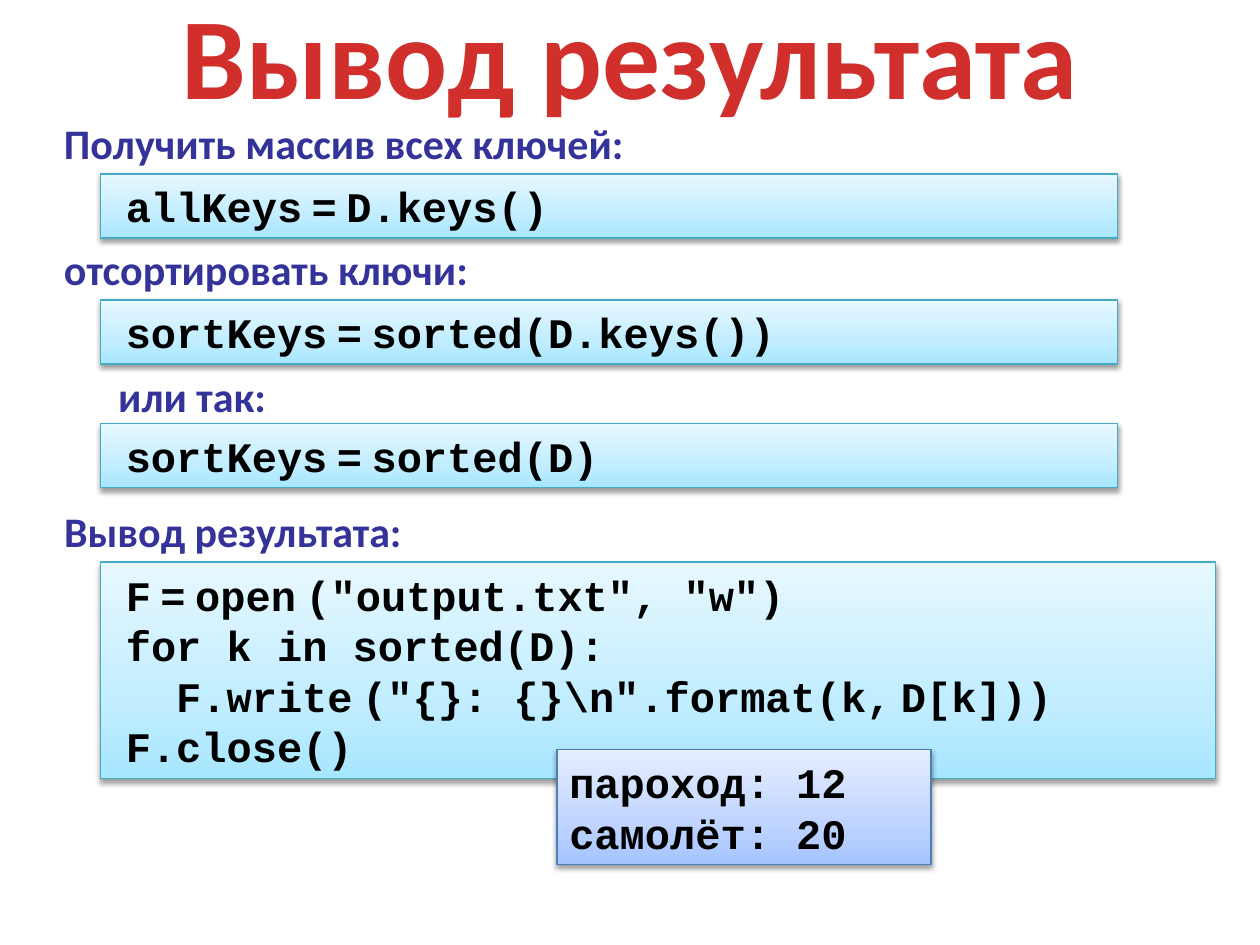
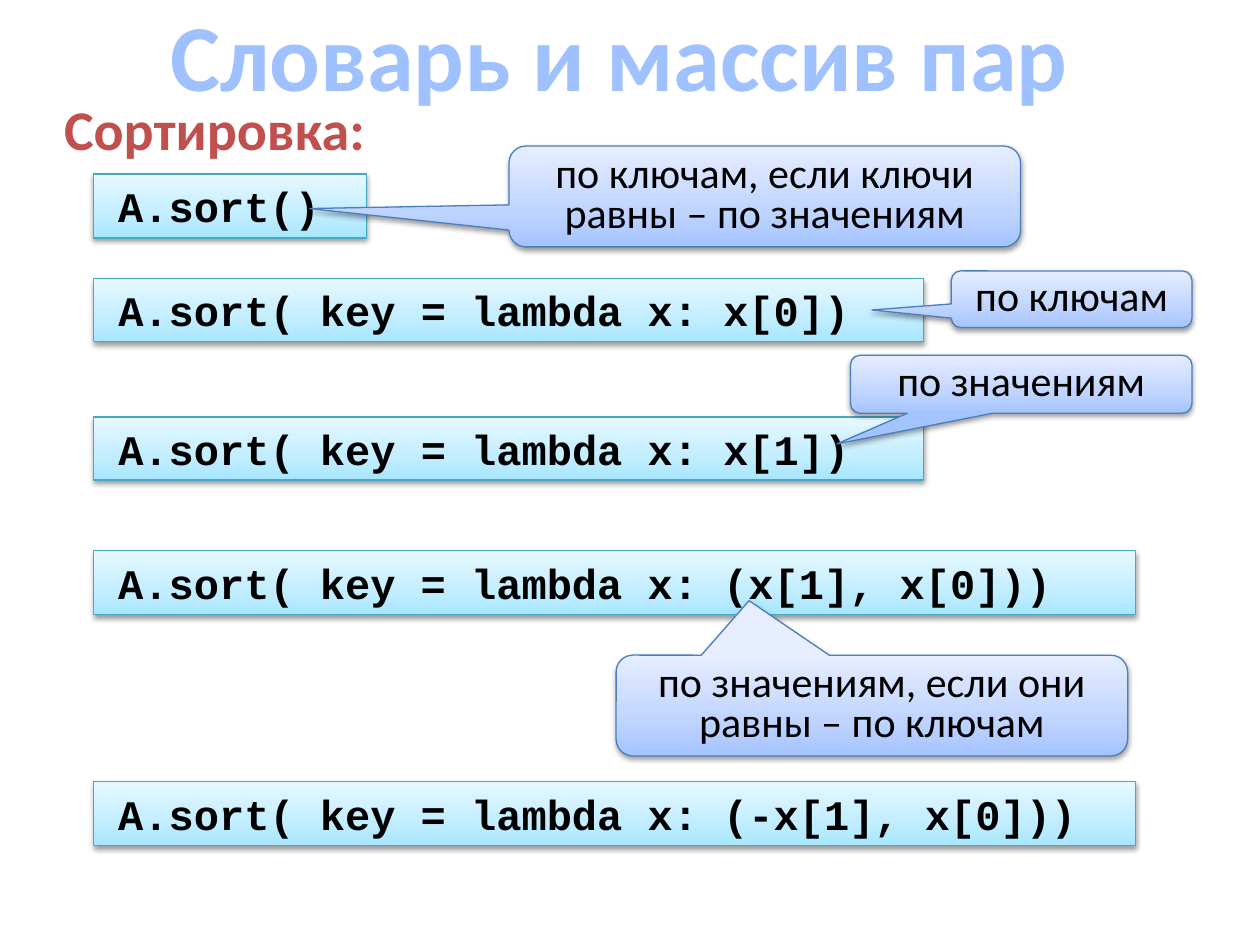
from dataclasses import dataclass

from lxml import etree
from pptx import Presentation
from pptx.dml.color import RGBColor
from pptx.enum.shapes import MSO_SHAPE
from pptx.enum.text import MSO_ANCHOR, MSO_AUTO_SIZE, PP_ALIGN
from pptx.oxml.ns import qn
from pptx.util import Inches, Pt

RECTANGLE = MSO_SHAPE.RECTANGLE
CALLOUT = MSO_SHAPE.ROUNDED_RECTANGULAR_CALLOUT
MIDDLE = MSO_ANCHOR.MIDDLE
GROW = MSO_AUTO_SIZE.SHAPE_TO_FIT_TEXT
CENTER, JUSTIFY = PP_ALIGN.CENTER, PP_ALIGN.JUSTIFY


@dataclass(frozen=True)
class Theme:
    text_font: str = "Calibri"
    code_font: str = "Courier New"
    body_size: int = 24
    heading_size: int = 32
    ink: str = "000000"
    label: str = "333399"
    heading: str = "C0504D"
    title_outline: str = "467AB8"
    red_title: tuple = ((0, "FC7C7A"), (75, "D02F2C"), (100, "C70500"))
    blue_title: tuple = ((0, "BFD3F9"), (9, "A0C1FF"), (50, "003D85"),
                         (79, "A0C1FF"), (100, "BFD3F9"))
    aqua: tuple = ((0, "A7E6FF"), (35, "C1EDFF"), (100, "E7F8FF"))
    aqua_line: str = "46AAC5"
    blue: tuple = ((0, "A4C4FF"), (35, "BFD4FF"), (100, "E6EEFF"))
    blue_line: str = "4B7EBC"


THEME = Theme()
NARROW_SPACE = "~"
CHARACTER_WIDTH = 0.2
LABEL_LEFT = 0.41

OUTPUT_TITLE = "Вывод результата"
OUTPUT_LABELS = [
    ("Получить массив всех ключей:", LABEL_LEFT, 0.88, 5.43),
    ("отсортировать ключи:", LABEL_LEFT, 1.88, 3.96),
    ("или так:", 0.84, 2.89, 1.56),
    ("Вывод результата:", LABEL_LEFT, 3.96, 3.39),
]
OUTPUT_CODE_LEFT = 0.8
OUTPUT_CODE = [
    (1.38, 8.07, 0.51, [(0, "allKeys~=~D.keys()")]),
    (2.38, 8.07, 0.51, [(0, "sortKeys~=~sorted(D.keys())")]),
    (3.36, 8.07, 0.51, [(0, "sortKeys~=~sorted(D)")]),
    (4.46, 8.85, 1.72, [
        (0, 'F~=~open~("output.txt", "w")'),
        (0, "for k in sorted(D):"),
        (2, 'F.write~("{}: {}\\n".format(k,~D[k]))'),
        (0, "F.close()"),
    ]),
]
OUTPUT_RESULT = [(0, "пароход: 12"), (0, "самолёт: 20")]

PAIRS_TITLE = "Словарь и массив пар "
PAIRS_HEADING = "Сортировка:"
SORT_LEFT = 0.74
SORT_CALLS = [
    (1.38, 2.17, 0.51, "A.sort()"),
    (2.21, 6.59, 0.5, "A.sort( key = lambda x: x[0])"),
    (3.31, 6.59, 0.5, "A.sort( key = lambda x: x[1])"),
    (4.37, 8.27, 0.51, "A.sort( key = lambda x: (x[1], x[0]))"),
    (6.2, 8.27, 0.51, "A.sort( key = lambda x: (-x[1], x[0]))"),
]
SORT_CALLOUTS = [
    ("по ключам, если ключи равны – по значениям",
     (4.04, 1.16, 4.06, 0.8), (-0.89, 0.12)),
    ("по значениям", (6.75, 2.82, 2.71, 0.46), (-0.54, 1.03)),
    ("по ключам", (7.55, 2.15, 1.91, 0.45), (-0.83, 0.19)),
    ("по значениям, если они равны – по ключам",
     (4.89, 5.2, 4.06, 0.8), (-0.24, -1.04)),
]


def add_element(parent, tag, **attributes):
    element = etree.SubElement(parent, qn(tag))
    for name, value in attributes.items():
        element.set(name, str(value))
    return element


def set_gradient(fill, owner, stops, angle):
    fill.gradient()
    gradient = owner.find(qn("a:gradFill"))
    for child in list(gradient):
        gradient.remove(child)
    stop_list = add_element(gradient, "a:gsLst")
    for position, color in stops:
        stop = add_element(stop_list, "a:gs", pos=position * 1000)
        add_element(stop, "a:srgbClr", val=color)
    add_element(gradient, "a:lin", ang=angle * 60000, scaled=0)


def add_span(para, text, font, size, color=None, bold=False):
    span = para.add_run()
    span.text = text
    span.font.name = font
    span.font.size = Pt(size)
    span.font.bold = bold
    if color:
        span.font.color.rgb = RGBColor.from_string(color)
    return span


def add_title(page, text, size, stops, outline=None):
    box = page.shapes.add_textbox(0, 0, Inches(10), Inches(0.85))
    box.text_frame.word_wrap = True
    box.text_frame.vertical_anchor = MIDDLE
    para = box.text_frame.paragraphs[0]
    para.alignment = CENTER
    span = add_span(para, text, THEME.text_font, size, bold=True)
    properties = span.font._element
    set_gradient(span.font.fill, properties, stops, 90)
    if outline:
        line = etree.Element(qn("a:ln"), w=str(Pt(0.83)))
        add_element(add_element(line, "a:solidFill"), "a:srgbClr", val=outline)
        properties.insert(0, line)


def add_label(page, text, left, top, width, height=0.51,
              size=THEME.body_size, color=THEME.label):
    box = page.shapes.add_textbox(*map(Inches, (left, top, width, height)))
    box.text_frame.word_wrap = False
    box.text_frame.auto_size = GROW
    add_span(box.text_frame.paragraphs[0], text, THEME.text_font, size, color, True)


def add_panel(page, kind, place, stops, line_color):
    panel = page.shapes.add_shape(kind, *map(Inches, place))
    properties = panel._element.spPr
    set_gradient(panel.fill, properties, stops, 270)
    panel.line.color.rgb = RGBColor.from_string(line_color)
    panel.line.width = Pt(0.75)
    panel.shadow.inherit = False
    shadow = add_element(properties.find(qn("a:effectLst")), "a:outerShdw",
                         blurRad=Pt(3.1), dist=Pt(1.6), dir=90 * 60000,
                         rotWithShape=0)
    color = add_element(shadow, "a:srgbClr", val="000000")
    add_element(color, "a:alpha", val=38000)
    panel.text_frame.word_wrap = True
    panel.text_frame.vertical_anchor = MIDDLE
    return panel


def add_code(page, place, lines, stops=THEME.aqua, line_color=THEME.aqua_line,
             hanging=0.1):
    frame = add_panel(page, RECTANGLE, place, stops, line_color).text_frame
    frame.auto_size = GROW
    for index, (indent, code) in enumerate(lines):
        para = frame.add_paragraph() if index else frame.paragraphs[0]
        para.alignment = JUSTIFY
        properties = para._p.get_or_add_pPr()
        properties.set("marL", str(Inches(0.2 + indent * CHARACTER_WIDTH)))
        properties.set("indent", str(Inches(-hanging)))
        for number, piece in enumerate(code.split(NARROW_SPACE)):
            if number:
                add_span(para, " ", THEME.text_font, THEME.body_size, THEME.ink, True)
            add_span(para, piece, THEME.code_font, THEME.body_size, THEME.ink, True)


def add_callout(page, text, place, tip):
    panel = add_panel(page, CALLOUT, place, THEME.blue, THEME.blue_line)
    panel.adjustments[0], panel.adjustments[1] = tip
    para = panel.text_frame.paragraphs[0]
    para.alignment = CENTER
    para.line_spacing = 0.8
    add_span(para, text, THEME.text_font, THEME.body_size, THEME.ink)


def build_output_page(page):
    add_title(page, OUTPUT_TITLE, 66, THEME.red_title)
    for label in OUTPUT_LABELS:
        add_label(page, *label)
    for top, width, height, lines in OUTPUT_CODE:
        add_code(page, (OUTPUT_CODE_LEFT, top, width, height), lines)
    add_code(page, (4.42, 5.95, 2.97, 0.91), OUTPUT_RESULT,
             THEME.blue, THEME.blue_line, hanging=0.2)


def build_pairs_page(page):
    add_title(page, PAIRS_TITLE, 54, THEME.blue_title, THEME.title_outline)
    add_label(page, PAIRS_HEADING, LABEL_LEFT, 0.7, 2.62, 0.64,
              THEME.heading_size, THEME.heading)
    for top, width, height, code in SORT_CALLS:
        add_code(page, (SORT_LEFT, top, width, height), [(0, code)])
    for callout in SORT_CALLOUTS:
        add_callout(page, *callout)


def main():
    deck = Presentation()
    deck.slide_width, deck.slide_height = Inches(10), Inches(7.5)
    blank = deck.slide_layouts[6]
    for build_page in (build_output_page, build_pairs_page):
        build_page(deck.slides.add_slide(blank))
    deck.save("out.pptx")


if __name__ == "__main__":
    main()
